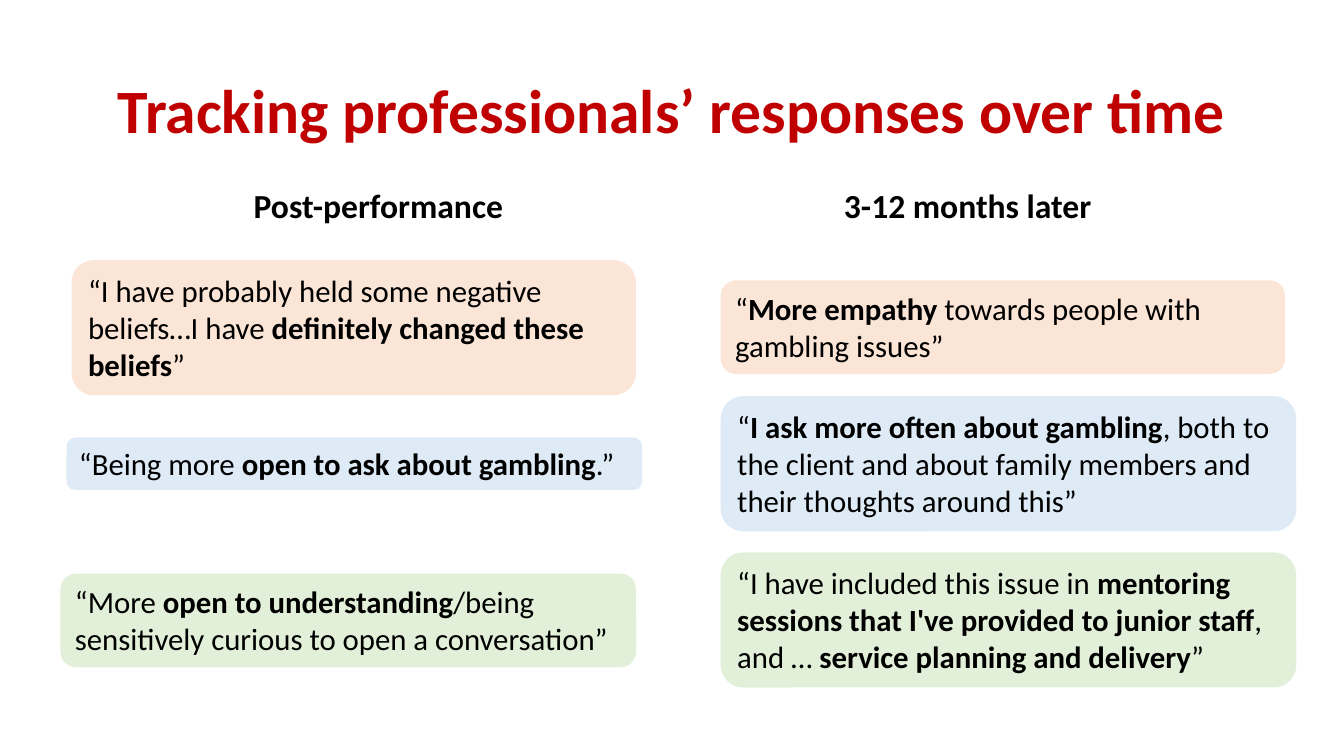
import pptx
import pptx.util
import pptx.dml.color
import pptx.enum.shapes
import pptx.enum.text

Pt = pptx.util.Pt
ALIGN = pptx.enum.text.PP_ALIGN
ANCHOR = pptx.enum.text.MSO_ANCHOR
FIT = pptx.enum.text.MSO_AUTO_SIZE

COLORS = {"title": "C00000", "text": "000000", "beliefs": "FBE5D6",
          "asking": "DEEBF7", "openness": "E2F0D9"}
QUOTES = [
    ("beliefs", 51.1, 185.8, 403.2, 3,
     ["“I have probably held some negative beliefs…I have ", "definitely changed these beliefs", "”"]),
    ("beliefs", 514.8, 200.2, 403.2, 2,
     ["“", "More empathy ", "towards people with gambling issues”"]),
    ("asking", 47.5, 312.5, 411.1, 1,
     ["“Being more ", "open to ask about gambling", ".”"]),
    ("asking", 514.8, 283, 411.1, 3,
     ["“", "I ask more often about gambling",
      ", both to the client and about family members and their thoughts around this”"]),
    ("openness", 43.2, 409.7, 411.1, 2,
     ["“More ", "open to understanding", "/being sensitively curious to open a conversation”"]),
    ("openness", 514.8, 394.6, 411.1, 3,
     ["“I have included this issue in ", "mentoring sessions that I've provided to junior staff",
      ", and … ", "service planning and delivery", "”"]),
]


class Deck:
    """Holds the style and the current slide, and adds each kind of element."""

    font = "Calibri"
    quote_size = 22
    line_height = 29.5
    quote_padding = 8

    def __init__(self):
        self.prs = pptx.Presentation()
        self.prs.slide_width, self.prs.slide_height = Pt(960), Pt(540)
        self.s = self.prs.slides.add_slide(self.prs.slide_layouts[4])

    def color(self, name):
        return pptx.dml.color.RGBColor.from_string(COLORS[name])

    def style(self, p, size, color, align, spacing=1.0):
        p.alignment, p.line_spacing, p.space_before = align, spacing, Pt(0)
        p.font.name, p.font.size = self.font, Pt(size)
        p.font.color.rgb = self.color(color)

    def heading(self, idx, text, box, size, color, anchor, spacing):
        sp = self.s.placeholders[idx]
        sp.left, sp.top, sp.width, sp.height = map(Pt, box)
        tf = sp.text_frame
        tf.text, tf.word_wrap = text, True
        tf.auto_size, tf.vertical_anchor = FIT.NONE, anchor
        p = tf.paragraphs[0]
        self.style(p, size, color, ALIGN.CENTER, spacing)
        p.font.bold = True

    def quote(self, fill, left, top, width, lines, parts):
        height = self.quote_padding + self.line_height * lines
        sp = self.s.shapes.add_shape(pptx.enum.shapes.MSO_SHAPE.ROUNDED_RECTANGLE,
                                     Pt(left), Pt(top), Pt(width), Pt(height))
        sp.shadow.inherit = False
        sp.fill.solid()
        sp.fill.fore_color.rgb = self.color(fill)
        sp.line.fill.background()
        tf = sp.text_frame
        tf.word_wrap, tf.auto_size, tf.vertical_anchor = True, FIT.SHAPE_TO_FIT_TEXT, ANCHOR.TOP
        p = tf.paragraphs[0]
        self.style(p, self.quote_size, "text", ALIGN.LEFT)
        for i, part in enumerate(parts):
            r = p.add_run()
            r.text, r.font.bold = part, i % 2 == 1

    def save(self):
        for sp in list(self.s.placeholders):
            if not sp.text_frame.text:
                sp.element.getparent().remove(sp.element)
        self.prs.save("out.pptx")


def main():
    deck = Deck()
    deck.heading(0, "Tracking professionals’ responses over time",
                 (66.2, 28.8, 828, 104.4), 44, "title", ANCHOR.MIDDLE, 0.9)
    for idx, text, left, width in ((1, "Post-performance", 66.2, 408.2),
                                   (3, "3-12 months later", 486, 410.4)):
        deck.heading(idx, text, (left, 132.5, width, 31.7), 24, "text", ANCHOR.BOTTOM, 0.8)
    for quote in QUOTES:
        deck.quote(*quote)
    deck.save()


if __name__ == "__main__":
    main()
